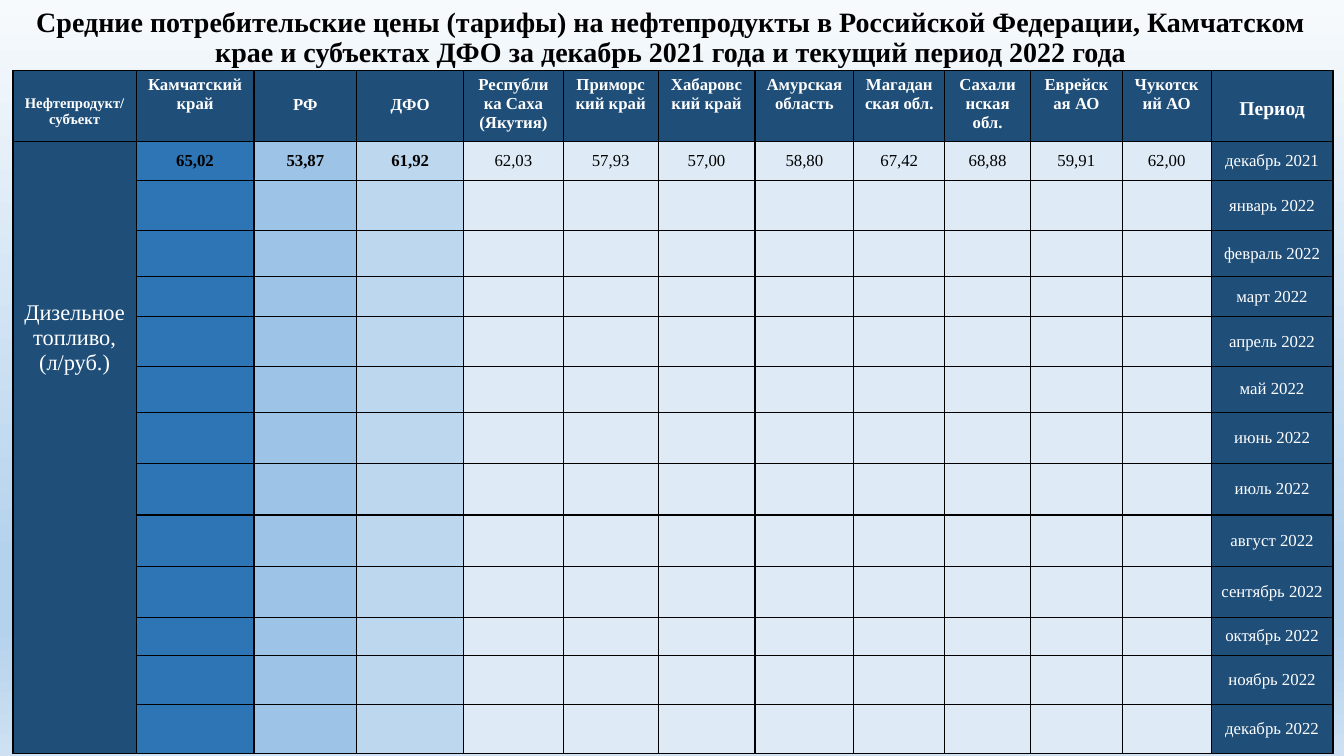
import lxml.etree
import pptx
import pptx.dml.color
import pptx.enum.text
import pptx.oxml
import pptx.oxml.ns
import pptx.util

Cm = pptx.util.Cm
Pt = pptx.util.Pt
FONT = "Times New Roman"
NAVY, WHITE, BLACK = "1F4E79", "FFFFFF", "000000"
PRICE_FILLS = ["2E75B6", "9DC3E6", "BDD7EE"] + ["DEEBF7"] * 8
BACKGROUND_STOPS = [(0, "F7FAFD"), (74, "B5D2EC"), (83, "B5D2EC"), (100, "CEE1F2")]

TITLE = (
    "Средние потребительские цены (тарифы) на нефтепродукты в Российской Федерации, "
    "Камчатском крае и субъектах ДФО за декабрь 2021 года и текущий период 2022 года"
)
REGION_PRICES = [
    ("Камчатский край", "65,02"),
    ("РФ", "53,87"),
    ("ДФО", "61,92"),
    ("Республика Саха (Якутия)", "62,03"),
    ("Приморский край", "57,93"),
    ("Хабаровский край", "57,00"),
    ("Амурская область", "58,80"),
    ("Магаданская обл.", "67,42"),
    ("Сахалинская обл.", "68,88"),
    ("Еврейская АО", "59,91"),
    ("Чукотский АО", "62,00"),
]
MONTHS = [
    "январь", "февраль", "март", "апрель", "май", "июнь",
    "июль", "август", "сентябрь", "октябрь", "ноябрь", "декабрь",
]
PERIODS = ["декабрь 2021"] + [f"{month} 2022" for month in MONTHS]
COLUMN_WIDTHS = [3.1, 2.97, 2.59, 2.69, 2.51, 2.39, 2.44, 2.49, 2.29, 2.16, 2.31, 2.24, 3.07]
ROW_HEIGHTS = [1.78, 0.99, 1.26, 1.16, 1.01, 1.26, 1.16, 1.29, 1.3, 1.3, 1.28, 0.96, 1.24, 1.25]


def color(value):
    return pptx.dml.color.RGBColor.from_string(value)


def write_paragraph(paragraph, text, size, text_color, bold=False):
    paragraph.alignment = pptx.enum.text.PP_ALIGN.CENTER
    run = paragraph.add_run()
    run.text = text
    run.font.name = FONT
    run.font.size = Pt(size)
    run.font.bold = bold
    run.font.color.rgb = color(text_color)


def write_cell(cell, lines, size, text_color, bold=False, lead=None):
    if lead is None:
        cell.vertical_anchor = pptx.enum.text.MSO_ANCHOR.MIDDLE
    else:
        cell.margin_top = Cm(0.13 + lead)
    frame = cell.text_frame
    for index, line in enumerate(lines):
        paragraph = frame.add_paragraph() if index else frame.paragraphs[0]
        write_paragraph(paragraph, line, size, text_color, bold)


def style_cell(cell, fill):
    cell.fill.solid()
    cell.fill.fore_color.rgb = color(fill)
    properties = cell._tc.get_or_add_tcPr()
    for index, side in enumerate(("lnL", "lnR", "lnT", "lnB")):
        border = pptx.oxml.parse_xml(
            f'<a:{side} {pptx.oxml.ns.nsdecls("a")} w="12700"><a:solidFill>'
            f'<a:srgbClr val="{BLACK}"/></a:solidFill></a:{side}>'
        )
        properties.insert(index, border)


def shrink_empty_cell(cell):
    paragraph = cell.text_frame.paragraphs[0]._p
    lxml.etree.SubElement(paragraph, pptx.oxml.ns.qn("a:endParaRPr"), sz="1200")


def paint_background(slide):
    fill = slide.background.fill
    fill.gradient()
    fill.gradient_angle = 270
    stops = fill.gradient_stops._gsLst
    for stop in list(stops):
        stops.remove(stop)
    for position, value in BACKGROUND_STOPS:
        stops.append(pptx.oxml.parse_xml(
            f'<a:gs {pptx.oxml.ns.nsdecls("a")} pos="{position * 1000}">'
            f'<a:srgbClr val="{value}"/></a:gs>'
        ))


def add_title(slide, left, top, width, height):
    box = slide.shapes.add_textbox(Cm(left), Cm(top), Cm(width), Cm(height))
    frame = box.text_frame
    frame.word_wrap = True
    frame.vertical_anchor = pptx.enum.text.MSO_ANCHOR.MIDDLE
    frame.paragraphs[0].line_spacing = 0.9
    write_paragraph(frame.paragraphs[0], TITLE, 20, BLACK, bold=True)


def add_price_table(slide, left, top, width, height):
    table = slide.shapes.add_table(
        len(ROW_HEIGHTS), len(COLUMN_WIDTHS), Cm(left), Cm(top), Cm(width), Cm(height)
    ).table
    table.first_row = False
    table.horz_banding = False
    for column, share in zip(table.columns, COLUMN_WIDTHS):
        column.width = Cm(width * share / sum(COLUMN_WIDTHS))
    for row, share in zip(table.rows, ROW_HEIGHTS):
        row.height = Cm(height * share / sum(ROW_HEIGHTS))

    last = len(COLUMN_WIDTHS) - 1
    for row_index in range(len(ROW_HEIGHTS)):
        fills = [NAVY] * (last + 1) if row_index == 0 else [NAVY] + PRICE_FILLS + [NAVY]
        for column_index, fill in enumerate(fills):
            cell = table.cell(row_index, column_index)
            style_cell(cell, fill)
            if row_index > 1 and column_index < last:
                shrink_empty_cell(cell)

    write_cell(table.cell(0, 0), ["Нефтепродукт/субъект"], 10.5, WHITE, True, lead=0.49)
    write_cell(table.cell(0, last), ["Период"], 14, WHITE, True, lead=0.57)
    for index, (region, price) in enumerate(REGION_PRICES, start=1):
        lead = 0.49 if region in ("РФ", "ДФО") else 0
        write_cell(table.cell(0, index), [region], 12, WHITE, True, lead)
        write_cell(table.cell(1, index), [price], 12, BLACK, bold=index <= 3)
    for index, period in enumerate(PERIODS, start=1):
        write_cell(table.cell(index, last), [period], 12, WHITE)

    product = table.cell(1, 0)
    product.merge(table.cell(len(PERIODS), 0))
    write_cell(product, ["Дизельное топливо,", "(л/руб.)"], 16, WHITE, lead=3.89)


def main():
    presentation = pptx.Presentation()
    presentation.slide_width = Cm(33.87)
    presentation.slide_height = Cm(19.05)
    slide = presentation.slides.add_slide(presentation.slide_layouts[6])
    paint_background(slide)
    add_title(slide, 0.51, 0.36, 32.79, 1.22)
    add_price_table(slide, 0.33, 1.78, 33.27, 17.22)
    presentation.save("out.pptx")


if __name__ == "__main__":
    main()
